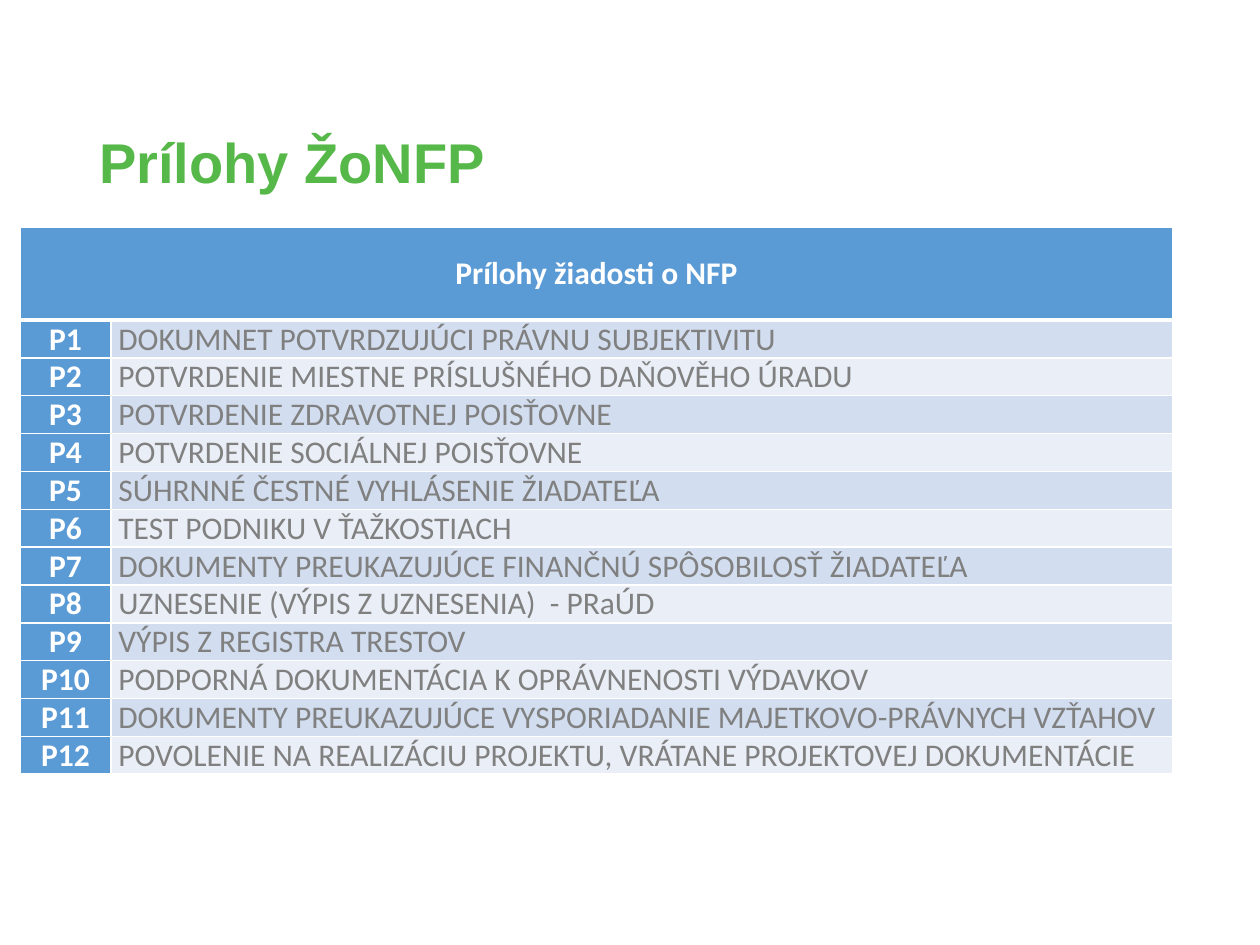
from lxml import etree
from pptx import Presentation
from pptx.dml.color import RGBColor
from pptx.enum.text import MSO_ANCHOR, PP_ALIGN
from pptx.oxml.ns import qn
from pptx.util import Inches, Pt

LEFT, CENTER, JUSTIFY = PP_ALIGN.LEFT, PP_ALIGN.CENTER, PP_ALIGN.JUSTIFY
MIDDLE = MSO_ANCHOR.MIDDLE

TITLE = "Prílohy ŽoNFP"
HEADER = "Prílohy žiadosti o NFP"
ATTACHMENTS = [
    "DOKUMNET POTVRDZUJÚCI PRÁVNU SUBJEKTIVITU",
    "POTVRDENIE MIESTNE PRÍSLUŠNÉHO DAŇOVĚHO ÚRADU",
    "POTVRDENIE ZDRAVOTNEJ POISŤOVNE",
    "POTVRDENIE SOCIÁLNEJ POISŤOVNE",
    "SÚHRNNÉ ČESTNÉ VYHLÁSENIE ŽIADATEĽA",
    "TEST PODNIKU V ŤAŽKOSTIACH",
    "DOKUMENTY PREUKAZUJÚCE FINANČNÚ SPÔSOBILOSŤ ŽIADATEĽA",
    "UZNESENIE (VÝPIS Z UZNESENIA)  - PRaÚD",
    "VÝPIS Z REGISTRA TRESTOV",
    "PODPORNÁ DOKUMENTÁCIA K OPRÁVNENOSTI VÝDAVKOV",
    "DOKUMENTY PREUKAZUJÚCE VYSPORIADANIE MAJETKOVO-PRÁVNYCH VZŤAHOV",
    "POVOLENIE NA REALIZÁCIU PROJEKTU, VRÁTANE PROJEKTOVEJ DOKUMENTÁCIE",
]
COLORS = {"title": "55B848", "accent": "5B9BD5", "white": "FFFFFF", "text": "808080"}
BANDS = ["D2DEEF", "EAEFF7"]
SLIDE_SIZE = (10, 7.5)
TITLE_BOX = (0.69, 0.83, 8.62, 0.96)
TABLE_LEFT, TABLE_TOP = 0.16, 1.8
COLUMN_WIDTHS = [0.72, 8.43]
ROW_HEIGHTS = [0.74] + [0.3] * len(ATTACHMENTS)


def write_text(frame, text, *, size=18, font="Calibri", color="white", bold=False,
               align=LEFT, line_spacing=None):
    paragraph = frame.paragraphs[0]
    paragraph.alignment = align
    paragraph.line_spacing = line_spacing
    run = paragraph.add_run()
    run.text = text
    run.font.size = Pt(size)
    run.font.name = font
    run.font.bold = bold
    run.font.color.rgb = RGBColor.from_string(COLORS[color])


def style_cell(cell, fill, bottom_width=1, top_width=1):
    cell.vertical_anchor = MIDDLE
    cell.margin_left = cell.margin_right = Inches(0.06)
    cell.margin_top = cell.margin_bottom = 0
    properties = cell._tc.get_or_add_tcPr()
    widths = {"L": 1, "R": 1, "T": top_width, "B": bottom_width}
    for side, width in widths.items():
        line = etree.SubElement(properties, qn(f"a:ln{side}"), w=str(Pt(width)))
        solid = etree.SubElement(line, qn("a:solidFill"))
        etree.SubElement(solid, qn("a:srgbClr"), val=COLORS["white"])
    cell.fill.solid()
    cell.fill.fore_color.rgb = RGBColor.from_string(fill)


def add_title(slide):
    frame = slide.shapes.add_textbox(*map(Inches, TITLE_BOX)).text_frame
    frame.word_wrap = True
    frame.vertical_anchor = MIDDLE
    write_text(frame, TITLE, size=32, font="Arial", color="title", bold=True,
               align=JUSTIFY, line_spacing=0.9)


def add_attachments(slide):
    area = (TABLE_LEFT, TABLE_TOP, sum(COLUMN_WIDTHS), sum(ROW_HEIGHTS))
    table = slide.shapes.add_table(
        len(ROW_HEIGHTS), len(COLUMN_WIDTHS), *map(Inches, area)).table
    for column, width in zip(table.columns, COLUMN_WIDTHS):
        column.width = Inches(width)
    for row, height in zip(table.rows, ROW_HEIGHTS):
        row.height = Inches(height)

    header = table.cell(0, 0)
    header.merge(table.cell(0, 1))
    for cell in table.rows[0].cells:
        style_cell(cell, COLORS["accent"], bottom_width=3)
    write_text(header.text_frame, HEADER, bold=True, align=CENTER)

    for number, name in enumerate(ATTACHMENTS, start=1):
        code_cell, name_cell = table.rows[number].cells
        top_width = 3 if number == 1 else 1
        style_cell(code_cell, COLORS["accent"], top_width=top_width)
        style_cell(name_cell, BANDS[(number - 1) % 2], top_width=top_width)
        write_text(code_cell.text_frame, f"P{number}", bold=True, align=CENTER)
        write_text(name_cell.text_frame, name, color="text")


def main():
    """Build the slide listing the attachments of the grant application."""
    presentation = Presentation()
    presentation.slide_width, presentation.slide_height = map(Inches, SLIDE_SIZE)
    slide = presentation.slides.add_slide(presentation.slide_layouts[6])
    add_title(slide)
    add_attachments(slide)
    presentation.save("out.pptx")


if __name__ == "__main__":
    main()
